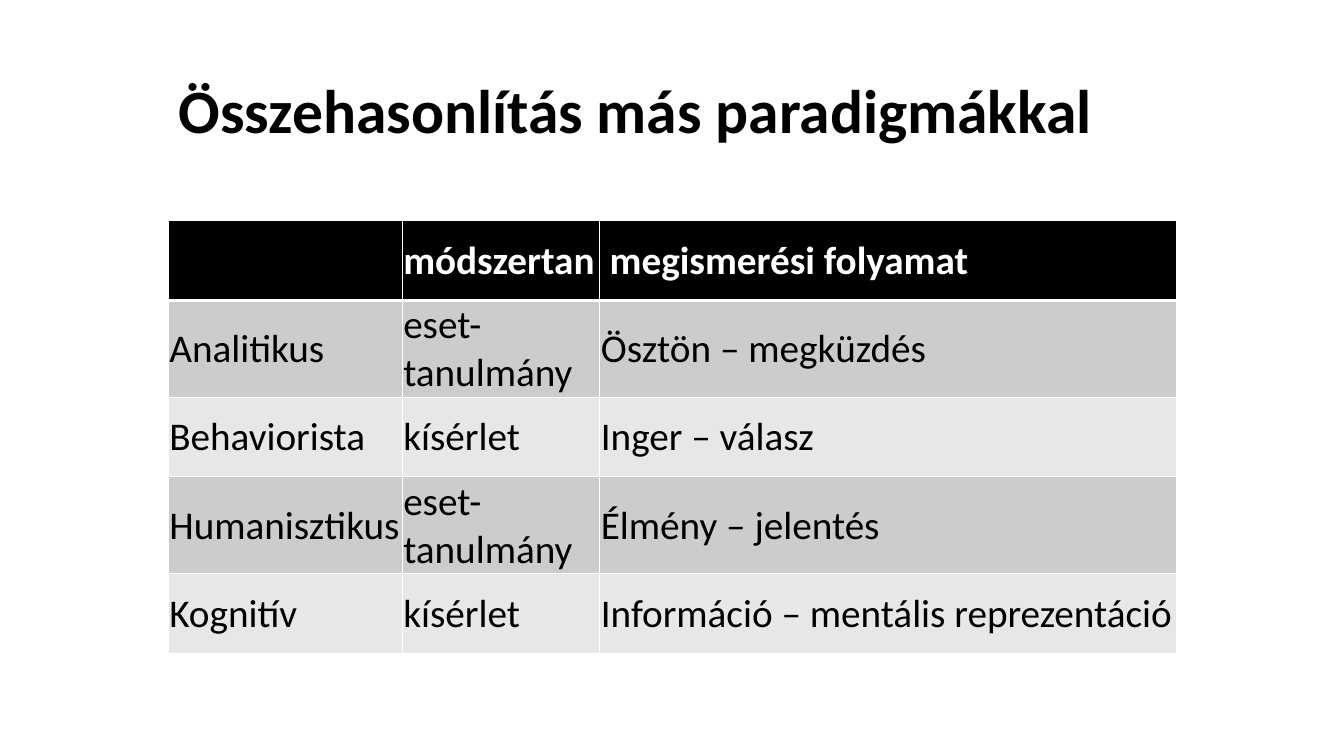
from lxml.etree import SubElement
from pptx import Presentation
from pptx.dml.color import RGBColor
from pptx.enum.text import MSO_ANCHOR, PP_ALIGN
from pptx.oxml.ns import qn
from pptx.util import Inches, Pt

BLACK = RGBColor(0x00, 0x00, 0x00)
WHITE = RGBColor(0xFF, 0xFF, 0xFF)
DARK_BAND = RGBColor(0xCC, 0xCC, 0xCC)
LIGHT_BAND = RGBColor(0xE7, 0xE7, 0xE7)

COLUMN_SHARES = (0.232, 0.196, 0.572)
ROW_HEIGHT = 0.79
PARADIGMS = (
    ("", "módszertan", " megismerési folyamat"),
    ("Analitikus", "eset- tanulmány", "Ösztön – megküzdés"),
    ("Behaviorista", "kísérlet", "Inger – válasz"),
    ("Humanisztikus", "eset- tanulmány", "Élmény – jelentés"),
    ("Kognitív", "kísérlet", "Információ – mentális reprezentáció"),
)


def write_text(frame, text, size=28, color=BLACK, bold=False, spacing=1.0):
    para = frame.paragraphs[0]
    para.alignment = PP_ALIGN.LEFT
    para.line_spacing = spacing
    span = para.add_run()
    span.text = text
    span.font.name = "Calibri"
    span.font.size = Pt(size)
    span.font.bold = bold
    span.font.color.rgb = color


def set_borders(cell, **widths):
    properties = cell._tc.get_or_add_tcPr()
    for side in "LRTB":
        line = SubElement(properties, qn(f"a:ln{side}"), w=str(Pt(widths.get(side, 1))))
        fill = SubElement(line, qn("a:solidFill"))
        SubElement(fill, qn("a:srgbClr"), val=str(WHITE))


def add_title(page, left, top, width, height):
    title = page.shapes.title
    title.left, title.top = Inches(left), Inches(top)
    title.width, title.height = Inches(width), Inches(height)
    title.text_frame.vertical_anchor = MSO_ANCHOR.MIDDLE
    write_text(title.text_frame, "Összehasonlítás más paradigmákkal", size=44, bold=True, spacing=0.9)


def fill_cell(cell, text, row_index):
    header = row_index == 0
    cell.margin_left = cell.margin_top = cell.margin_right = Inches(0.01)
    cell.margin_bottom = 0
    cell.vertical_anchor = MSO_ANCHOR.MIDDLE
    set_borders(cell, T=3 if row_index == 1 else 1, B=3 if header else 1)
    cell.fill.solid()
    band = DARK_BAND if row_index % 2 else LIGHT_BAND
    cell.fill.fore_color.rgb = BLACK if header else band
    if text:
        write_text(cell.text_frame, text, color=WHITE if header else BLACK, bold=header)


def add_paradigm_table(page, left, top, width):
    frame = page.shapes.add_table(
        len(PARADIGMS), len(COLUMN_SHARES), Inches(left), Inches(top),
        Inches(width), Inches(ROW_HEIGHT * len(PARADIGMS)),
    )
    table = frame.table
    for column, share in zip(table.columns, COLUMN_SHARES):
        column.width = Inches(width * share)
    for row_index, texts in enumerate(PARADIGMS):
        table.rows[row_index].height = Inches(ROW_HEIGHT)
        for column_index, text in enumerate(texts):
            fill_cell(table.cell(row_index, column_index), text, row_index)


def main():
    deck = Presentation()
    deck.slide_width, deck.slide_height = Inches(13.33), Inches(7.5)
    page = deck.slides.add_slide(deck.slide_layouts.get_by_name("Title Only"))
    add_title(page, 1.67, 0.4, 10, 1.45)
    add_paradigm_table(page, 1.67, 2.19, 10)
    deck.save("out.pptx")


if __name__ == "__main__":
    main()
